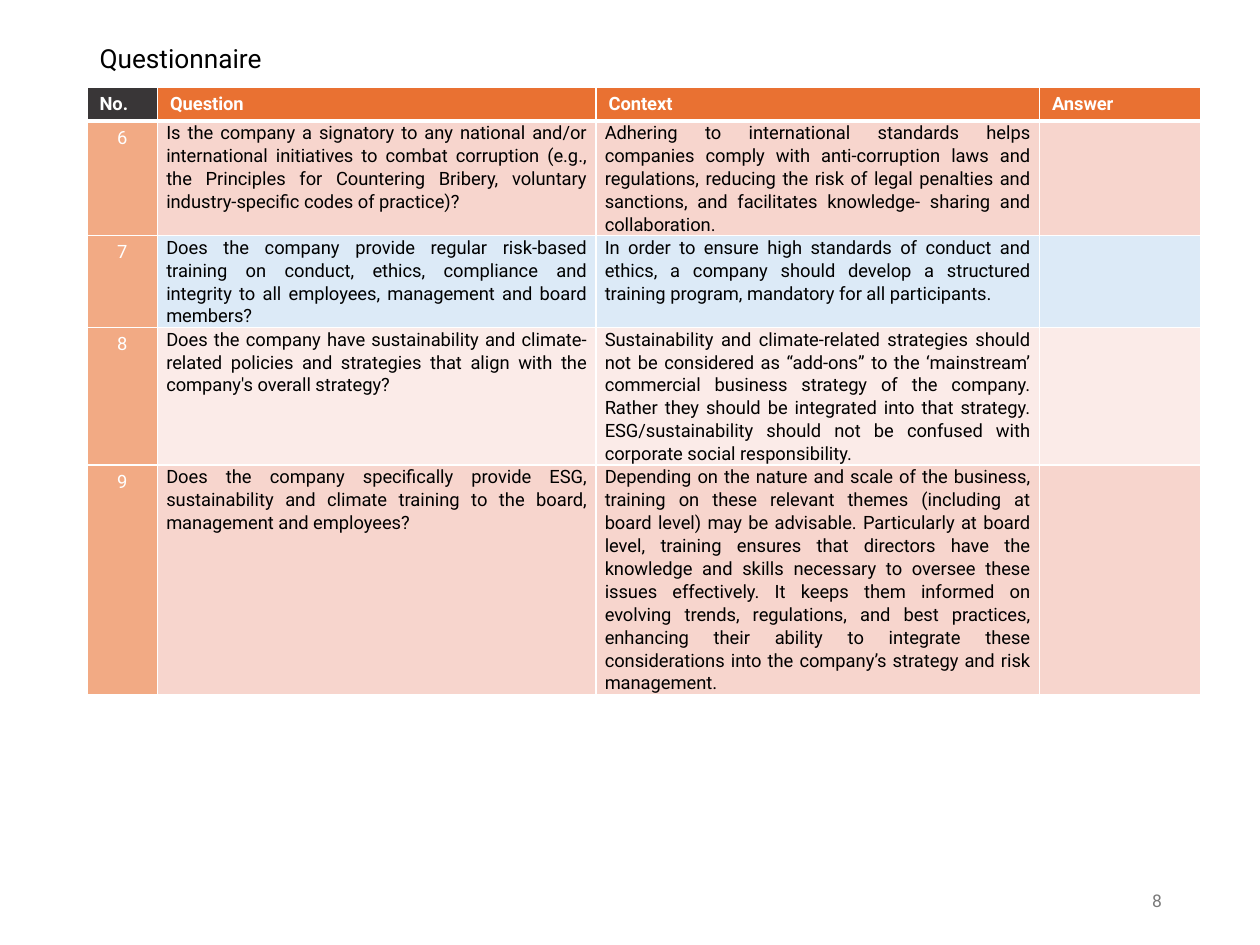
from lxml import etree
from pptx import Presentation
from pptx.dml.color import RGBColor
from pptx.enum.text import MSO_ANCHOR, PP_ALIGN
from pptx.oxml.ns import qn
from pptx.util import Inches, Pt

LEFT, CENTER, RIGHT, JUSTIFY = PP_ALIGN.LEFT, PP_ALIGN.CENTER, PP_ALIGN.RIGHT, PP_ALIGN.JUSTIFY
MIDDLE = MSO_ANCHOR.MIDDLE
FONT = "Roboto"
WHITE, BLACK, GRAY = "FFFFFF", "000000", "797979"
DARK, ORANGE, PEACH = "393637", "E97132", "F2AA84"
ROSE, BLUE, BLUSH = "F7D5CD", "DCEAF7", "FBEBE8"

TITLE = "Questionnaire"
PAGE_NUMBER = "8"
HEADERS = ["No.", "Question", "Context", "Answer"]
QUESTIONS = [
    ("6", ROSE,
     "Is the company a signatory to any national and/or international initiatives to combat "
     "corruption (e.g., the Principles for Countering Bribery, voluntary industry-specific "
     "codes of practice)?",
     "Adhering to international standards helps companies comply with anti-corruption laws and "
     "regulations, reducing the risk of legal penalties and sanctions, and facilitates "
     "knowledge- sharing and collaboration."),
    ("7", BLUE,
     "Does the company provide regular risk-based training on conduct, ethics, compliance and "
     "integrity to all employees, management and board members?",
     "In order to ensure high standards of conduct and ethics, a company should develop a "
     "structured training program, mandatory for all participants."),
    ("8", BLUSH,
     "Does the company have sustainability and climate-related policies and strategies that "
     "align with the company's overall strategy?",
     "Sustainability and climate-related strategies should not be considered as “add-ons” to "
     "the ‘mainstream’ commercial business strategy of the company. Rather they should be "
     "integrated into that strategy. ESG/sustainability should not be confused with corporate "
     "social responsibility."),
    ("9", ROSE,
     "Does the company specifically provide ESG, sustainability and climate training to the "
     "board, management and employees?",
     "Depending on the nature and scale of the business, training on these relevant themes "
     "(including at board level) may be advisable. Particularly at board level, training "
     "ensures that directors have the knowledge and skills necessary to oversee these issues "
     "effectively. It keeps them informed on evolving trends, regulations, and best practices, "
     "enhancing their ability to integrate these considerations into the company’s strategy "
     "and risk management."),
]
COLUMN_WIDTHS = [0.56, 3.48, 3.52, 1.28]
ROW_HEIGHTS = [0.27, 0.91, 0.73, 1.09, 1.81]
MARGIN_LEFT, TABLE_TOP = 0.69, 0.69


def color(value):
    return RGBColor.from_string(value)


def write(frame, text, size, text_color, align=LEFT, bold=False, line_spacing=None):
    paragraph = frame.paragraphs[0]
    paragraph.alignment = align
    if line_spacing:
        paragraph.line_spacing = line_spacing
    run = paragraph.add_run()
    run.text = text
    run.font.name = FONT
    run.font.size = Pt(size)
    run.font.bold = bold
    run.font.color.rgb = color(text_color)
    return paragraph


def style_cell(cell, fill, top, bottom):
    properties = cell._tc.get_or_add_tcPr()
    for side, width in (("L", 1), ("R", 1), ("T", top), ("B", bottom)):
        line = etree.SubElement(properties, qn(f"a:ln{side}"), w=str(Pt(width)))
        solid = etree.SubElement(line, qn("a:solidFill"))
        etree.SubElement(solid, qn("a:srgbClr"), val=WHITE)
    cell.fill.solid()
    cell.fill.fore_color.rgb = color(fill)


def write_body(cell, text):
    cell.margin_left = cell.margin_right = Inches(0.07)
    cell.margin_top = cell.margin_bottom = 0
    paragraph = write(cell.text_frame, text, 10.5, BLACK, JUSTIFY, line_spacing=1.07)
    paragraph.space_after = Pt(2)


def add_title(slide):
    title = slide.shapes.title
    title.left, title.top = Inches(MARGIN_LEFT), Inches(0.27)
    title.width, title.height = Inches(8.62), Inches(0.42)
    title.text_frame.vertical_anchor = MIDDLE
    write(title.text_frame, TITLE, 15, BLACK, line_spacing=0.9)


def add_questionnaire(slide):
    table = slide.shapes.add_table(
        len(ROW_HEIGHTS), len(COLUMN_WIDTHS), Inches(MARGIN_LEFT), Inches(TABLE_TOP),
        Inches(sum(COLUMN_WIDTHS)), Inches(sum(ROW_HEIGHTS))).table
    table.horz_banding = False
    for column, width in zip(table.columns, COLUMN_WIDTHS):
        column.width = Inches(width)
    for row, height in zip(table.rows, ROW_HEIGHTS):
        row.height = Inches(height)
    for index, header in enumerate(HEADERS):
        cell = table.cell(0, index)
        style_cell(cell, ORANGE if index else DARK, 1, 3)
        write(cell.text_frame, header, 10.5, WHITE, bold=True)
    for index, (number, fill, question, context) in enumerate(QUESTIONS, 1):
        cells = table.rows[index].cells
        for cell, cell_fill in zip(cells, [PEACH, fill, fill, fill]):
            style_cell(cell, cell_fill, 3 if index == 1 else 1, 1)
        write(cells[0].text_frame, number, 10.5, WHITE, CENTER)
        write_body(cells[1], question)
        write_body(cells[2], context)


def add_page_number(slide):
    box = slide.shapes.add_textbox(Inches(6.58), Inches(6.95), Inches(2.74), Inches(0.4))
    box.text_frame.word_wrap = True
    box.text_frame.vertical_anchor = MIDDLE
    write(box.text_frame, PAGE_NUMBER, 10, GRAY, RIGHT)


def main():
    presentation = Presentation()
    presentation.slide_width, presentation.slide_height = Inches(10), Inches(7.5)
    slide = presentation.slides.add_slide(presentation.slide_layouts[5])
    add_title(slide)
    add_questionnaire(slide)
    add_page_number(slide)
    presentation.save("out.pptx")


if __name__ == "__main__":
    main()
